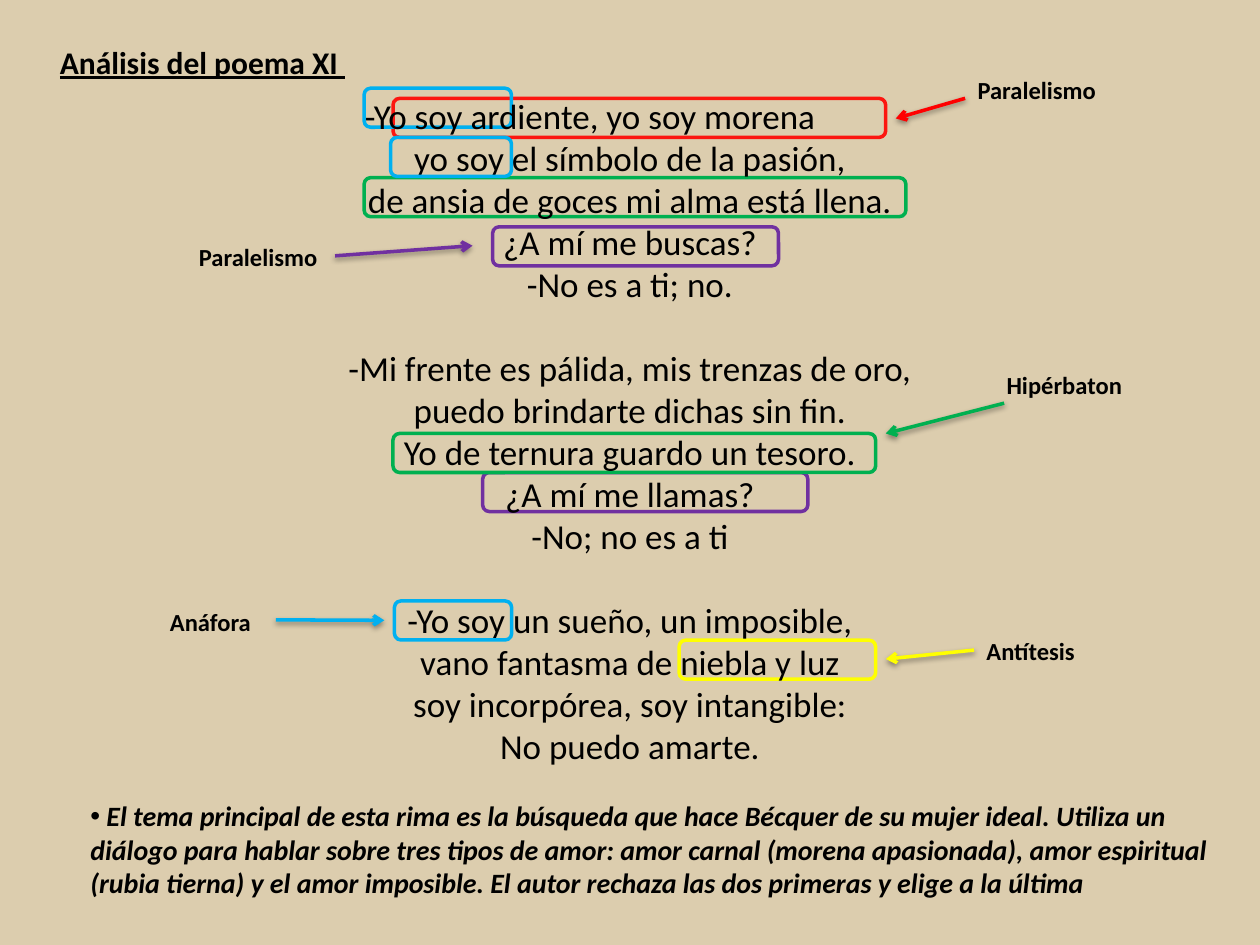
from lxml.etree import SubElement
from pptx import Presentation
from pptx.dml.color import RGBColor
from pptx.enum.shapes import MSO_CONNECTOR, MSO_SHAPE
from pptx.enum.text import MSO_ANCHOR, MSO_AUTO_SIZE, PP_ALIGN
from pptx.oxml.ns import qn
from pptx.util import Pt

COLORS = {
    "sand": "DCCDAE", "black": "000000", "scarlet": "FC1610", "red": "FF0000",
    "yellow": "FFFF00", "blue": "00B0F0", "purple": "7030A0", "green": "00B050",
}
FONT = "Calibri"
LINE_WIDTH = 2
MARK_HEIGHT = 22.3
STANZA_GAP = 24

# left, top, width, colour, filled; from back to front
VERSE_MARKS = [
    (224.6, 56.2, 281.5, "scarlet", True),
    (388.1, 365.8, 112.3, "yellow", True),
    (208.1, 50.4, 84.2, "blue", False),
    (275.8, 270, 185.8, "purple", True),
    (281.5, 129.6, 163.4, "purple", True),
    (224.6, 247.7, 275.8, "green", True),
    (208.1, 101.5, 309.6, "green", True),
]
ANAPHORA_MARKS = [
    (223.2, 78.5, 69.1, "blue", False),
    (225.4, 343.4, 67, "blue", False),
]
# start x, start y, end x, end y, colour
ARROWS = [
    (551.5, 56.2, 511.9, 67.7, "red"),
    (157.7, 354.2, 219.6, 354.5, "blue"),
    (556.6, 371.5, 506.2, 376.6, "yellow"),
    (191.5, 146.2, 270, 140.4, "purple"),
    (573.8, 230.4, 506.2, 247.7, "green"),
]
# text, left, top, width
LABELS = [
    ("Paralelismo", 551.5, 39.6, 106.6),
    ("Antítesis", 556.6, 360, 84.2),
    ("Anáfora", 90, 343.4, 73.4),
    ("Hipérbaton", 568.1, 208.1, 129.6),
    ("Paralelismo", 106.6, 134.6, 112.3),
]
# text, space before; "\v" breaks a line inside a paragraph
POEM = [
    ("-Yo soy ardiente, yo soy morena", 0),
    ("yo soy el símbolo de la pasión,\vde ansia de goces mi alma está llena.\v"
     "¿A mí me buscas?", 0),
    ("-No es a ti; no.", 0),
    ("-Mi frente es pálida, mis trenzas de oro,\vpuedo brindarte dichas sin fin.\v"
     "Yo de ternura guardo un tesoro.\v¿A mí me llamas?\v-No; no es a ti", STANZA_GAP),
    ("-Yo soy un sueño, un imposible,\vvano fantasma de niebla y luz\v"
     "soy incorpórea, soy intangible:\vNo puedo amarte.", STANZA_GAP),
]
FIRST_VERSE_INDENT = 21.4
THEME = (
    " El tema principal de esta rima es la búsqueda que hace Bécquer de su mujer ideal. "
    "Utiliza un diálogo para hablar sobre tres tipos de amor: amor carnal (morena "
    "apasionada), amor espiritual (rubia tierna) y el amor imposible. El autor rechaza "
    "las dos primeras y elige a la última"
)


def color(name):
    return RGBColor.from_string(COLORS[name])


def write(paragraph, text, size, bold=False, italic=False, underline=False,
          align=PP_ALIGN.LEFT, space_before=0):
    paragraph.text = text
    paragraph.alignment = align
    paragraph.space_before = Pt(space_before)
    for run in paragraph.runs:
        font = run.font
        font.name, font.size = FONT, Pt(size)
        font.bold, font.italic, font.underline = bold, italic, underline
        font.color.rgb = color("black")


def add_text_box(slide, left, top, width, height):
    frame = slide.shapes.add_textbox(Pt(left), Pt(top), Pt(width), Pt(height)).text_frame
    frame.word_wrap = True
    return frame


def add_title(slide, text):
    title = slide.shapes.title
    title.left, title.top, title.width, title.height = Pt(27), Pt(21), Pt(272), Pt(29)
    frame = title.text_frame
    frame.auto_size = MSO_AUTO_SIZE.NONE
    frame.vertical_anchor = MSO_ANCHOR.TOP
    write(frame.paragraphs[0], text, size=18, bold=True, underline=True)


def add_mark(slide, left, top, width, color_name, filled):
    """Frame a piece of verse with a rounded outline."""
    shape = slide.shapes.add_shape(MSO_SHAPE.ROUNDED_RECTANGLE, Pt(left), Pt(top),
                                   Pt(width), Pt(MARK_HEIGHT))
    shape.shadow.inherit = False
    if filled:
        shape.fill.solid()
        shape.fill.fore_color.rgb = color("sand")
    else:
        shape.fill.background()
    shape.line.color.rgb = color(color_name)
    shape.line.width = Pt(LINE_WIDTH)


def add_arrow(slide, start_x, start_y, end_x, end_y, color_name):
    """Draw an arrow with an open head and a soft shadow below it."""
    arrow = slide.shapes.add_connector(MSO_CONNECTOR.STRAIGHT, Pt(start_x), Pt(start_y),
                                       Pt(end_x), Pt(end_y))
    arrow.line.color.rgb = color(color_name)
    arrow.line.width = Pt(LINE_WIDTH)
    SubElement(arrow.line._get_or_add_ln(), qn("a:tailEnd"), type="arrow")
    effects = SubElement(arrow._element.spPr, qn("a:effectLst"))
    shadow = SubElement(effects, qn("a:outerShdw"), blurRad=str(Pt(3.1)),
                        dist=str(Pt(1.6)), dir="5400000", rotWithShape="0")
    tint = SubElement(shadow, qn("a:srgbClr"), val=COLORS["black"])
    SubElement(tint, qn("a:alpha"), val="38000")


def add_label(slide, text, left, top, width):
    frame = add_text_box(slide, left, top, width, 24.5)
    write(frame.paragraphs[0], text, size=14, bold=True)


def add_poem(slide):
    frame = add_text_box(slide, 180, 50.4, 360, 416.9)
    for index, (text, space_before) in enumerate(POEM):
        paragraph = frame.add_paragraph() if index else frame.paragraphs[0]
        write(paragraph, text, size=20, align=PP_ALIGN.CENTER, space_before=space_before)
    first_verse = frame.paragraphs[0]
    first_verse.alignment = PP_ALIGN.LEFT
    first_verse._p.get_or_add_pPr().set("marL", str(Pt(FIRST_VERSE_INDENT)))


def add_theme(slide):
    paragraph = add_text_box(slide, 44.6, 452.9, 675.4, 87.1).paragraphs[0]
    write(paragraph, THEME, size=16, bold=True, italic=True)
    properties = paragraph._p.get_or_add_pPr()
    SubElement(properties, qn("a:buFont"), typeface="Arial")
    SubElement(properties, qn("a:buChar"), char="•")


def main():
    presentation = Presentation()
    presentation.slide_width, presentation.slide_height = Pt(720), Pt(540)
    slide = presentation.slides.add_slide(presentation.slide_layouts[5])
    slide.background.fill.solid()
    slide.background.fill.fore_color.rgb = color("sand")

    add_title(slide, "Análisis del poema XI ")
    for mark in VERSE_MARKS:
        add_mark(slide, *mark)
    add_poem(slide)
    for mark in ANAPHORA_MARKS:
        add_mark(slide, *mark)
    for arrow in ARROWS:
        add_arrow(slide, *arrow)
    for label in LABELS:
        add_label(slide, *label)
    add_theme(slide)
    presentation.save("out.pptx")


if __name__ == "__main__":
    main()
